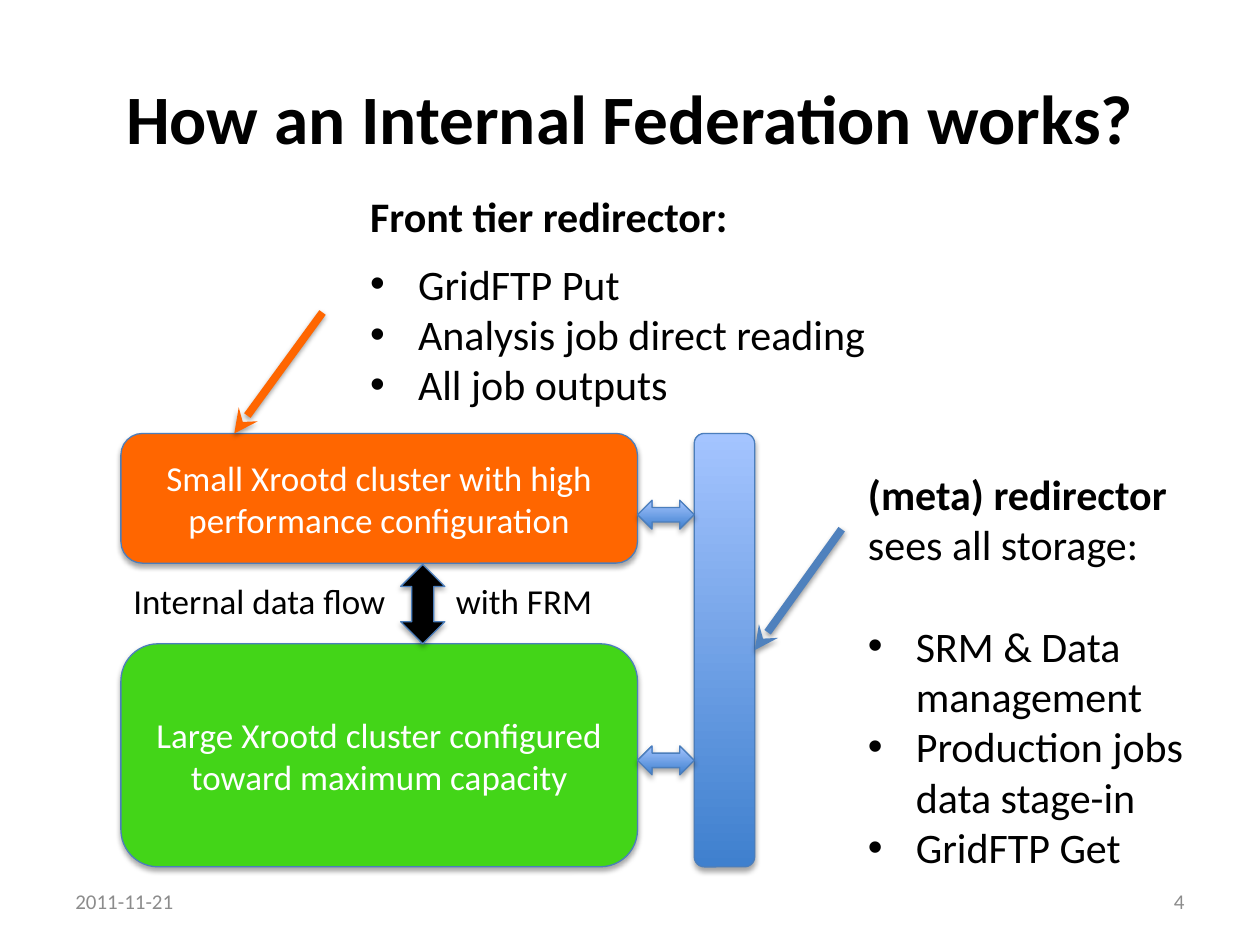
from lxml import etree
from pptx import Presentation
from pptx.dml.color import RGBColor
from pptx.enum.shapes import MSO_CONNECTOR, MSO_SHAPE
from pptx.enum.text import MSO_ANCHOR, PP_ALIGN
from pptx.oxml.ns import qn
from pptx.util import Inches, Pt

ROUNDED = MSO_SHAPE.ROUNDED_RECTANGLE
UP_DOWN = MSO_SHAPE.UP_DOWN_ARROW
LEFT_RIGHT = MSO_SHAPE.LEFT_RIGHT_ARROW
STRAIGHT = MSO_CONNECTOR.STRAIGHT
TOP, MIDDLE = MSO_ANCHOR.TOP, MSO_ANCHOR.MIDDLE
LEFT, CENTER, RIGHT = PP_ALIGN.LEFT, PP_ALIGN.CENTER, PP_ALIGN.RIGHT

BLACK = RGBColor(0x00, 0x00, 0x00)
WHITE = RGBColor(0xFF, 0xFF, 0xFF)
GRAY = RGBColor(0x8C, 0x8C, 0x8C)
GREEN = RGBColor(0x43, 0xD5, 0x18)
ORANGE = RGBColor(0xFF, 0x66, 0x00)
BLUE = RGBColor(0x4F, 0x81, 0xBD)
OUTLINE = RGBColor(0x4B, 0x7E, 0xBC)
DEEP_BLUE = RGBColor(0x3F, 0x80, 0xCE)
PALE_BLUE = RGBColor(0xA4, 0xC4, 0xFF)
BLUE_GRADIENT = (DEEP_BLUE, PALE_BLUE)


def add_element(parent, tag, **attributes):
    element = etree.SubElement(parent, qn(tag))
    for name, value in attributes.items():
        element.set(name, str(value))
    return element


def write(frame, text, size=24, color=BLACK, bold=False, align=LEFT,
          bullet=False, before=0, tab=None, font="Calibri"):
    paragraph = frame.paragraphs[0] if not frame.text else frame.add_paragraph()
    properties = paragraph._p.get_or_add_pPr()
    if bullet:
        properties.set("marL", str(Inches(0.38)))
        properties.set("indent", str(-Inches(0.38)))
        add_element(properties, "a:buFont", typeface="Arial")
        add_element(properties, "a:buChar", char="•")
    if tab:
        stops = add_element(properties, "a:tabLst")
        add_element(stops, "a:tab", pos=Inches(tab), algn="l")
    paragraph.alignment = align
    if before:
        paragraph.space_before = Pt(before)
    span = paragraph.add_run()
    span.text = text
    span.font.name = font
    span.font.size = Pt(size)
    span.font.bold = bold
    span.font.color.rgb = color


def add_shadow(effects, opacity, distance):
    shadow = add_element(effects, "a:outerShdw", blurRad=Pt(3.1), dist=Pt(distance),
                         dir=5400000, rotWithShape=0)
    color = add_element(shadow, "a:srgbClr", val=BLACK)
    add_element(color, "a:alpha", val=opacity * 1000)


class SlideBuilder:
    def __init__(self, deck):
        self.page = deck.slides.add_slide(deck.slide_layouts[5])

    def title(self, text, left, top, width, height):
        title = self.page.shapes.title
        title.left, title.top = Inches(left), Inches(top)
        title.width, title.height = Inches(width), Inches(height)
        title.text_frame.vertical_anchor = MIDDLE
        write(title.text_frame, text, size=39.6, bold=True, align=CENTER)

    def text(self, left, top, width, height, anchor=TOP):
        box = self.page.shapes.add_textbox(
            Inches(left), Inches(top), Inches(width), Inches(height))
        box.text_frame.word_wrap = True
        box.text_frame.vertical_anchor = anchor
        return box.text_frame

    def shape(self, kind, left, top, width, height, fill, text=None):
        shape = self.page.shapes.add_shape(
            kind, Inches(left), Inches(top), Inches(width), Inches(height))
        if isinstance(fill, RGBColor):
            shape.fill.solid()
            shape.fill.fore_color.rgb = fill
        else:
            shape.fill.gradient()
            shape.fill.gradient_angle = 90
            for stop, color, position in zip(shape.fill.gradient_stops, fill, (0, 1)):
                stop.color.rgb = color
                stop.position = position
        shape.line.color.rgb = OUTLINE
        shape.line.width = Pt(0.75)
        shape.shadow.inherit = False
        add_shadow(shape._element.spPr.find(qn("a:effectLst")), 35, 1.8)
        if text:
            shape.text_frame.vertical_anchor = MIDDLE
            write(shape.text_frame, text, size=20, color=WHITE, align=CENTER)

    def pointer(self, tip_x, tip_y, end_x, end_y, color):
        line = self.page.shapes.add_connector(
            STRAIGHT, Inches(tip_x), Inches(tip_y), Inches(end_x), Inches(end_y))
        line.line.color.rgb = color
        line.line.width = Pt(4.5)
        add_element(line._element.spPr.find(qn("a:ln")), "a:headEnd", type="stealth")
        add_shadow(add_element(line._element.spPr, "a:effectLst"), 38, 1.6)


def main():
    deck = Presentation()
    deck.slide_width, deck.slide_height = Inches(10), Inches(7.5)
    slide = SlideBuilder(deck)
    slide.title("How an Internal Federation works?", 0.5, 0.3, 9, 1.25)

    slide.shape(ROUNDED, 0.96, 5.11, 4.1, 1.77, GREEN,
                "Large Xrootd cluster configured toward maximum capacity")
    slide.shape(ROUNDED, 0.96, 3.44, 4.1, 1.03, ORANGE,
                "Small Xrootd cluster with high performance configuration")
    slide.shape(ROUNDED, 5.51, 3.44, 0.48, 3.44, BLUE_GRADIENT)
    slide.shape(UP_DOWN, 3.18, 4.48, 0.35, 0.63, BLACK)
    slide.pointer(5.99, 5.16, 6.68, 4.2, BLUE)
    slide.pointer(1.86, 3.44, 2.56, 2.48, ORANGE)

    meta = slide.text(6.79, 3.67, 2.71, 3.33)
    write(meta, "(meta) redirector", bold=True)
    write(meta, "sees all storage:")
    write(meta, "SRM & Data management", bullet=True, before=29)
    for item in ("Production jobs data stage-in", "GridFTP Get"):
        write(meta, item, bullet=True)

    front = slide.text(2.84, 1.46, 4.86, 1.85)
    write(front, "Front tier redirector:", bold=True)
    write(front, "GridFTP Put", bullet=True, before=10)
    for item in ("Analysis job direct reading", "All job outputs"):
        write(front, item, bullet=True)

    flow = slide.text(0.96, 4.55, 3.89, 0.44)
    write(flow, "Internal data flow\twith FRM", size=20, tab=2.56)

    for top in (3.97, 5.92):
        slide.shape(LEFT_RIGHT, 5.06, top, 0.45, 0.23, BLUE_GRADIENT)

    for text, left, align in (("2011-11-21", 0.5, LEFT), ("4", 7.17, RIGHT)):
        footer = slide.text(left, 6.95, 2.33, 0.4, anchor=MIDDLE)
        write(footer, text, size=12, color=GRAY, align=align)

    deck.save("out.pptx")


if __name__ == "__main__":
    main()
